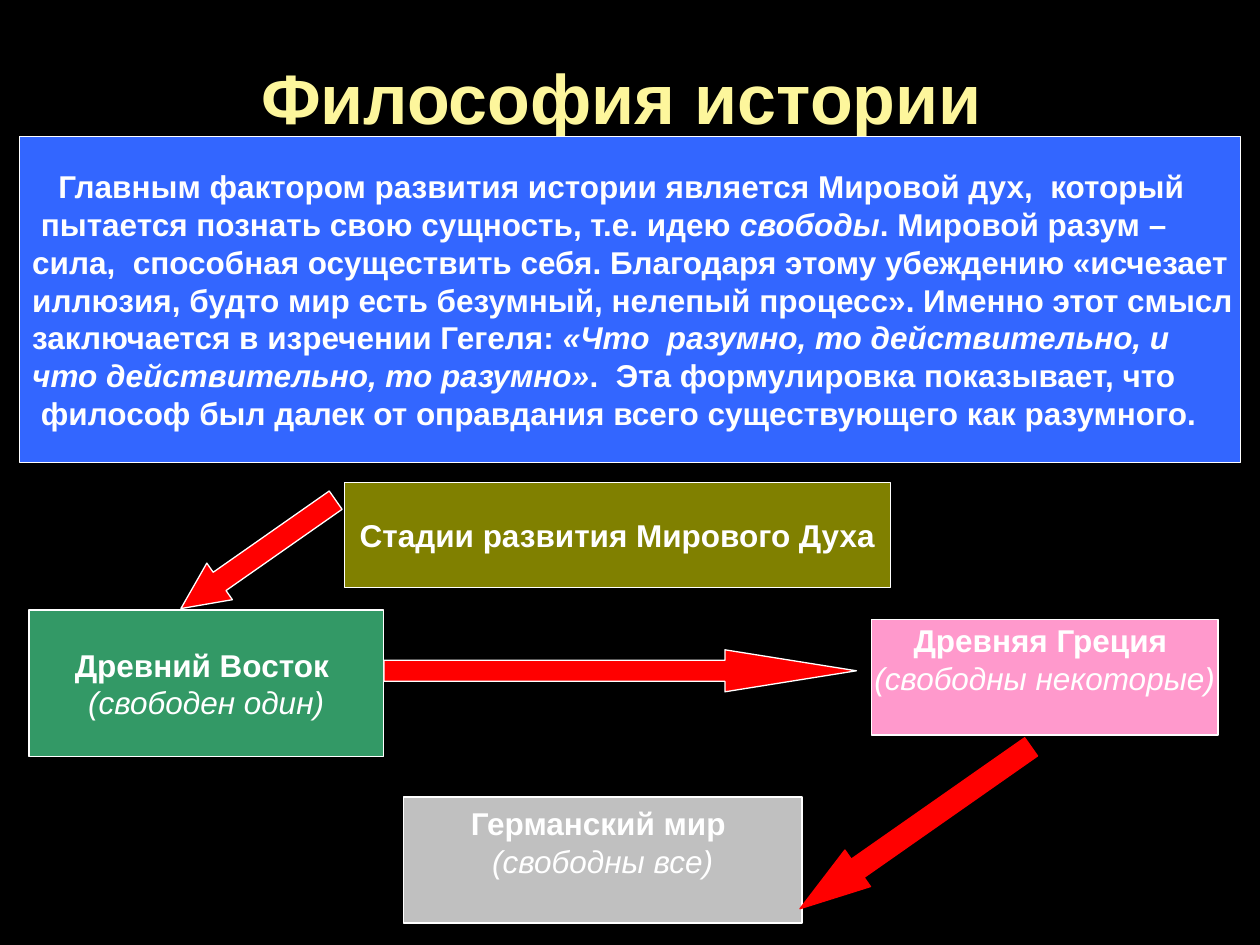
import pptx
import pptx.util
import pptx.dml.color
import pptx.enum.shapes
import pptx.enum.text

Pt = pptx.util.Pt
RGB = pptx.dml.color.RGBColor
Shape = pptx.enum.shapes.MSO_SHAPE
Align = pptx.enum.text.PP_ALIGN
Anchor = pptx.enum.text.MSO_ANCHOR

BLACK = RGB(0x00, 0x00, 0x00)
WHITE = RGB(0xFF, 0xFF, 0xFF)
CREAM = RGB(0xFD, 0xF6, 0x9C)
BLUE = RGB(0x33, 0x66, 0xFF)
OLIVE = RGB(0x80, 0x80, 0x00)
GREEN = RGB(0x33, 0x99, 0x66)
PINK = RGB(0xFF, 0x99, 0xCC)
GREY = RGB(0xC0, 0xC0, 0xC0)
RED = RGB(0xFF, 0x00, 0x00)

BOLD, ITALIC, BOTH = (True, False), (False, True), (True, True)
SPACE = 5   # width of one space in the body text
LINE = 21   # height of one line of the body text

# Each line of the thesis: first-line indent, then its runs
THESIS = [
    (3 * SPACE, [("Главным фактором развития истории является Мировой дух,  который", BOLD)]),
    (SPACE, [("пытается познать свою сущность, т.е. идею ", BOLD),
             ("свободы", BOTH), (". Мировой разум – ", BOLD)]),
    (0, [("сила,  способная осуществить себя. Благодаря этому убеждению «исчезает ", BOLD)]),
    (0, [("иллюзия, будто мир есть безумный, нелепый процесс». Именно этот смысл ", BOLD)]),
    (0, [("заключается в изречении Гегеля: ", BOLD),
         ("«Что  разумно, то действительно, и ", BOTH)]),
    (0, [("что действительно, то разумно»", BOTH),
         (".  Эта формулировка показывает, что", BOLD)]),
    (SPACE, [("философ был далек от оправдания всего существующего как разумного.", BOLD)]),
]

# Stage name, freedom, box, fill, space kept free below the text
STAGES = [
    ("Древний Восток ", "(свободен один)", (16.6, 348.5, 202.5, 84), GREEN, 0),
    ("Древняя Греция ", "(свободны некоторые)", (498, 354, 198, 66), PINK, LINE),
    ("Германский мир ", "(свободны все)", (230.4, 455.5, 228, 72), GREY, LINE),
]

# Preset, box, rotation, length of the head, line colour
ARROWS = [
    (Shape.DOWN_ARROW, (134.8, 262.8, 25.5, 108), 55, 1.06, WHITE),
    (Shape.RIGHT_ARROW, (219.4, 371.3, 270, 24), 0, 3.13, WHITE),
    (Shape.DOWN_ARROW, (510.4, 392.4, 25.5, 161.3), 55, 1.58, RED),
]


def style(run, size, color, bold=True, italic=False):
    font = run.font
    font.name = "Arial"
    font.size = Pt(size)
    font.color.rgb = color
    font.bold = bold
    font.italic = italic


def add_title(slide, text, box):
    title = slide.shapes.title
    title.left, title.top, title.width, title.height = map(Pt, box)
    frame = title.text_frame
    frame.text = text
    frame.vertical_anchor = Anchor.MIDDLE
    para = frame.paragraphs[0]
    para.alignment = Align.CENTER
    style(para.runs[0], 40, CREAM)


def add_form(slide, kind, box, fill, line):
    form = slide.shapes.add_shape(kind, *map(Pt, box))
    form.shadow.inherit = False
    form.fill.solid()
    form.fill.fore_color.rgb = fill
    form.line.color.rgb = line
    form.line.width = Pt(0.75)
    return form


def add_box(slide, box, fill, lines, align=Align.CENTER, below=0):
    """Add a panel whose lines are pairs of an indent and a list of runs."""
    frame = add_form(slide, Shape.RECTANGLE, box, fill, WHITE).text_frame
    frame.word_wrap = False
    frame.vertical_anchor = Anchor.MIDDLE
    frame.margin_bottom = Pt(3.6 + below)
    for i, (indent, parts) in enumerate(lines):
        para = frame.add_paragraph() if i else frame.paragraphs[0]
        para.alignment = align
        if indent:
            para._p.get_or_add_pPr().set("indent", str(Pt(indent)))
        for text, (bold, italic) in parts:
            run = para.add_run()
            run.text = text
            style(run, 18, WHITE, bold, italic)


def add_arrow(slide, kind, box, turn, head, line):
    arrow = add_form(slide, kind, box, RED, line)
    arrow.rotation = turn
    arrow.adjustments[0] = 0.5
    arrow.adjustments[1] = head


def main():
    deck = pptx.Presentation()
    deck.slide_width, deck.slide_height = Pt(720), Pt(540)
    slide = deck.slides.add_slide(deck.slide_layouts[5])
    slide.background.fill.solid()
    slide.background.fill.fore_color.rgb = BLACK

    add_title(slide, "Философия истории ", (129.6, 22.3, 462, 66))
    add_box(slide, (11.3, 78, 697.7, 186.3), BLUE, THESIS, Align.JUSTIFY)
    add_box(slide, (196.8, 275.8, 312, 60), OLIVE,
            [(0, [("Стадии развития Мирового Духа", BOLD)])])
    for name, free, box, fill, below in STAGES:
        add_box(slide, box, fill, [(0, [(name, BOLD)]), (0, [(free, ITALIC)])],
                below=below)
    for arrow in ARROWS:
        add_arrow(slide, *arrow)

    deck.save("out.pptx")


if __name__ == "__main__":
    main()
